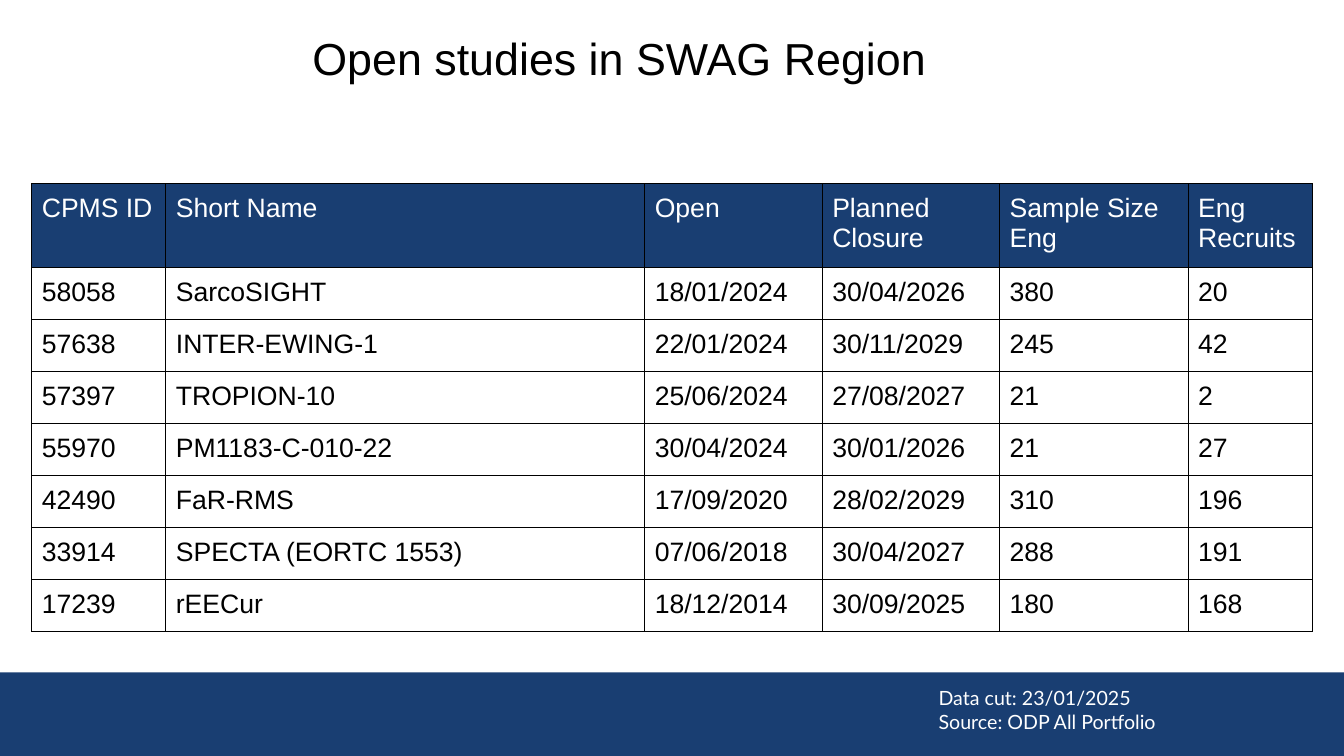
from dataclasses import dataclass

from lxml.etree import SubElement
from pptx import Presentation
from pptx.dml.color import RGBColor as Color
from pptx.enum.shapes import MSO_SHAPE as Preset
from pptx.oxml.ns import qn
from pptx.util import Inches, Pt

# Content
TITLE = "Open studies in SWAG Region"
HEADER = ("CPMS ID", "Short Name", "Open", "Planned Closure",
          "Sample Size Eng", "Eng Recruits")
STUDIES = [
    ("58058", "SarcoSIGHT", "18/01/2024", "30/04/2026", "380", "20"),
    ("57638", "INTER-EWING-1", "22/01/2024", "30/11/2029", "245", "42"),
    ("57397", "TROPION-10", "25/06/2024", "27/08/2027", "21", "2"),
    ("55970", "PM1183-C-010-22", "30/04/2024", "30/01/2026", "21", "27"),
    ("42490", "FaR-RMS", "17/09/2020", "28/02/2029", "310", "196"),
    ("33914", "SPECTA (EORTC 1553)", "07/06/2018", "30/04/2027", "288", "191"),
    ("17239", "rEECur", "18/12/2014", "30/09/2025", "180", "168"),
]
FOOTER = "Data cut: 23/01/2025\nSource: ODP All Portfolio"


@dataclass(frozen=True)
class Theme:
    navy: str = "193E72"
    white: str = "FFFFFF"
    black: str = "000000"
    main_font: str = "Arial"
    footer_font: str = "Lato"
    title_size: int = 32
    table_size: int = 19
    footer_size: int = 14
    border: float = 0.75
    inset: float = 0.1


THEME = Theme()

# Layout, in inches
WIDTH, HEIGHT = 13.33, 7.5
BAND_HEIGHT = 0.83
COLUMNS = (1.33, 4.75, 1.76, 1.76, 1.87, 1.23)
TABLE_TOP, TABLE_HEIGHT, HEADER_HEIGHT = 1.82, 4.45, 0.83
TABLE_LEFT = (WIDTH - sum(COLUMNS)) / 2
STUDY_HEIGHT = (TABLE_HEIGHT - HEADER_HEIGHT) / len(STUDIES)


def style(frame, font, size, color):
    for para in frame.paragraphs:
        for span in para.runs:
            span.font.name = font
            span.font.size = Pt(size)
            span.font.color.rgb = Color.from_string(color)


def set_insets(target):
    target.margin_left = target.margin_right = Inches(THEME.inset)
    target.margin_top = target.margin_bottom = Inches(THEME.inset)


def paint(target, color):
    target.fill.solid()
    target.fill.fore_color.rgb = Color.from_string(color)


def add_text(page, text, place, font, size, color):
    frame = page.shapes.add_textbox(*map(Inches, place)).text_frame
    frame.word_wrap = True
    set_insets(frame)
    frame.text = text
    style(frame, font, size, color)


def add_borders(cell):
    props = cell._tc.get_or_add_tcPr()
    for index, side in enumerate(("a:lnL", "a:lnR", "a:lnT", "a:lnB")):
        line = SubElement(props, qn(side), w=str(Pt(THEME.border)))
        fill = SubElement(line, qn("a:solidFill"))
        SubElement(fill, qn("a:srgbClr"), val=THEME.black)
        props.insert(index, line)  # borders come before the fill


def add_studies(page):
    rows = [HEADER, *STUDIES]
    place = (TABLE_LEFT, TABLE_TOP, sum(COLUMNS), TABLE_HEIGHT)
    table = page.shapes.add_table(
        len(rows), len(COLUMNS), *map(Inches, place)).table
    for column, width in zip(table.columns, COLUMNS):
        column.width = Inches(width)
    for r, values in enumerate(rows):
        is_header = r == 0
        table.rows[r].height = Inches(HEADER_HEIGHT if is_header else STUDY_HEIGHT)
        for c, value in enumerate(values):
            cell = table.cell(r, c)
            cell.text_frame.text = value
            set_insets(cell)
            paint(cell, THEME.navy if is_header else THEME.white)
            style(cell.text_frame, THEME.main_font, THEME.table_size,
                  THEME.white if is_header else THEME.black)
            add_borders(cell)


def main():
    deck = Presentation()
    deck.slide_width, deck.slide_height = Inches(WIDTH), Inches(HEIGHT)
    page = deck.slides.add_slide(deck.slide_layouts[6])

    # Footer band
    place = (0, HEIGHT - BAND_HEIGHT, WIDTH, BAND_HEIGHT)
    band = page.shapes.add_shape(Preset.RECTANGLE, *map(Inches, place))
    band.shadow.inherit = False
    band.line.fill.background()
    paint(band, THEME.navy)

    # Table, title and source
    add_studies(page)
    add_text(page, TITLE, (3, 0.2, 6.8, 0.74),
             THEME.main_font, THEME.title_size, THEME.black)
    add_text(page, FOOTER, (9.21, 6.71, 3.11, 0.67),
             THEME.footer_font, THEME.footer_size, THEME.white)

    deck.save("out.pptx")


if __name__ == "__main__":
    main()
